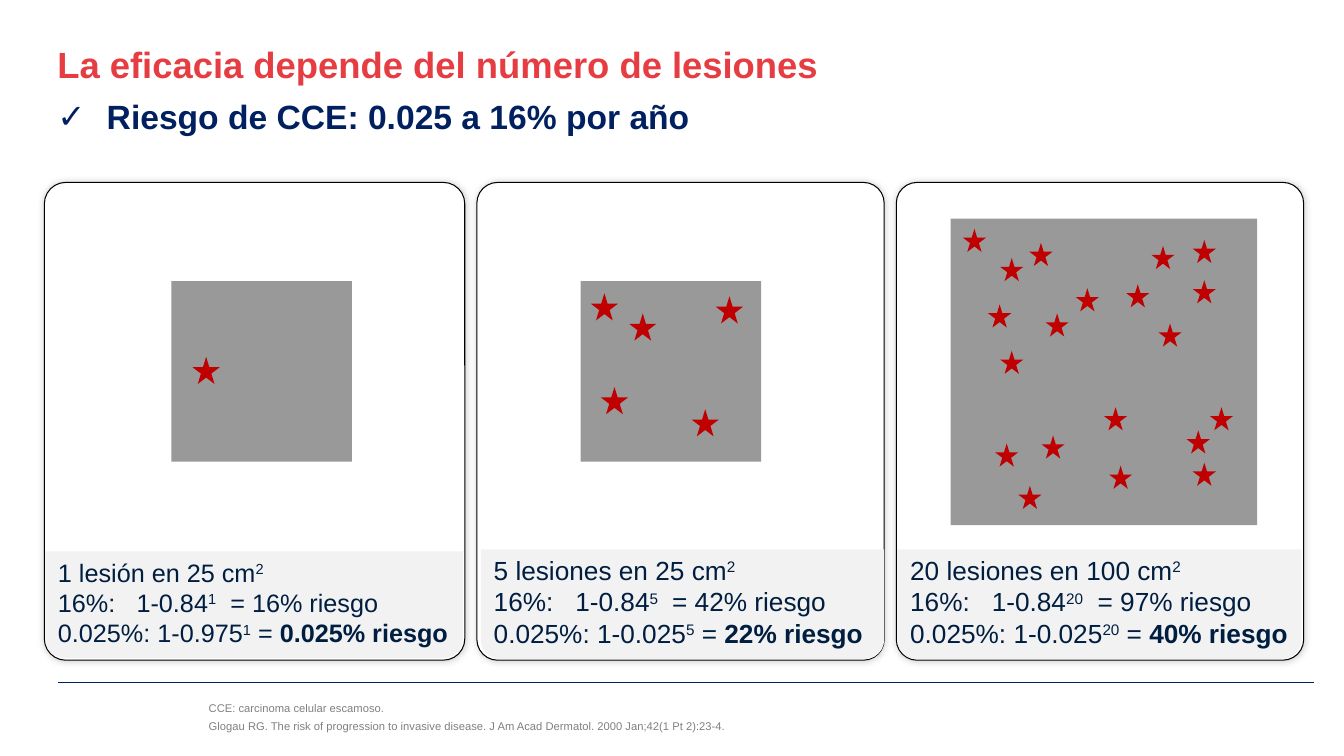
from lxml import etree
from pptx import Presentation
from pptx import util as u
from pptx.dml.color import RGBColor
from pptx.enum import shapes, text
from pptx.oxml import ns

NAVY, CAPTION_INK, RED, STAR_RED = "002060", "001E40", "E63D42", "C00000"
SKIN, CAPTION_FILL, BLACK, WHITE, NOTE_GREY = "999999", "F2F2F2", "000000", "FFFFFF", "808080"
CARD_TOP, CARD_HEIGHT = 18.1, 47.4

PANELS = [
    dict(card=(4.4, 41.7), caption=(4.5, 54.7, 41.4, 10.6), size=18, tabs=(0.78, 1.71),
         headline="1 lesión en 25 cm", power="1", base="0.975", high="16%", low="0.025%",
         field=(17, 27.9, 17.9), star=2.7, lesions=[(2.1, 7.5)]),
    dict(card=(47.3, 40.4), caption=(47.7, 54.5, 40, 10.9), size=18.7, tabs=(0.81, 1.77),
         headline="5 lesiones en 25 cm", power="5", base="0.025", high="42%", low="22%",
         field=(57.6, 27.9, 17.9), star=2.7,
         lesions=[(1, 1.2), (4.8, 3.2), (2, 10.5), (13.4, 1.5), (11, 12.7)]),
    dict(card=(88.9, 40.4), caption=(89, 54.5, 40.1, 10.9), size=18.7, tabs=(0.81, 1.86),
         headline="20 lesiones en 100 cm", power="20", base="0.025", high="97%", low="40%",
         field=(94.3, 21.7, 30.4), star=2.3,
         lesions=[(4.9, 3.9), (24, 2.1), (24, 24.2), (3.7, 8.5), (4.9, 13.1),
                  (7.8, 2.4), (17.4, 6.5), (25.7, 18.7), (1.2, 1), (12.4, 6.9),
                  (23.4, 21), (19.9, 2.7), (24, 6.1), (9.4, 9.4), (9, 21.5),
                  (15.2, 18.7), (20.6, 10.4), (15.7, 24.5), (6.7, 26.5), (4.4, 22.3)]),
]


def cells(*counts):
    """Turn counts of tenth-of-an-inch grid cells into lengths."""
    return [u.Inches(count / 10) for count in counts]


def color(hex_code):
    """Return the colour for a hex string."""
    return RGBColor.from_string(hex_code)


def add_xml(parent, tag, **attributes):
    """Append a drawing element and return it."""
    child = etree.SubElement(parent, ns.qn(tag))
    for key, value in attributes.items():
        child.set(key, value)
    return child


def add_block(slide, preset, box, fill, adjustments=()):
    """Add a flat filled preset shape without outline."""
    block = slide.shapes.add_shape(preset, *cells(*box))
    block.shadow.inherit = False
    block.fill.solid()
    block.fill.fore_color.rgb = color(fill)
    block.line.fill.background()
    for index, value in enumerate(adjustments):
        block.adjustments[index] = value
    return block


def add_card(slide, left, width):
    """Add an outlined rounded card with a soft shadow."""
    card = add_block(slide, shapes.MSO_SHAPE.ROUNDED_RECTANGLE,
                     (left, CARD_TOP, width, CARD_HEIGHT), WHITE, [0.051])
    card.line.color.rgb = color(BLACK)
    card.line.width = u.Pt(0.75)
    effects = card._element.spPr.find(ns.qn("a:effectLst"))
    shadow = add_xml(effects, "a:outerShdw", blurRad=str(u.Pt(5)), dist="0", dir="0",
                     algn="ctr", rotWithShape="0")
    add_xml(add_xml(shadow, "a:srgbClr", val=BLACK), "a:alpha", val="20000")


def add_words(paragraph, words, size, ink, bold=False, raised=False):
    """Add one formatted run to a paragraph."""
    run = paragraph.add_run()
    run.text = words
    run.font.name, run.font.size, run.font.bold = "Arial", u.Pt(size), bold
    run.font.color.rgb = color(ink)
    if raised:
        run._r.get_or_add_rPr().set("baseline", "30000")


def add_text_area(slide, box, margins):
    """Add a wrapping text box and return its frame."""
    frame = slide.shapes.add_textbox(*cells(*box)).text_frame
    frame.word_wrap = True
    set_margins(frame, *margins)
    return frame


def set_margins(frame, side, edge):
    """Set equal side margins and equal top and bottom margins."""
    frame.margin_left = frame.margin_right = u.Inches(side)
    frame.margin_top = frame.margin_bottom = u.Inches(edge)


def add_heading(slide):
    """Add the title and its check-marked subtitle."""
    frame = add_text_area(slide, (4.7, 4.2, 124.5, 9.7), (0.1, 0.05))
    title, risk = frame.paragraphs[0], frame.add_paragraph()
    properties = risk._p.get_or_add_pPr()
    properties.set("marL", str(u.Inches(0.49)))
    properties.set("indent", str(-u.Inches(0.49)))
    add_xml(properties, "a:buFont", typeface="Arial")
    add_xml(properties, "a:buChar", char="✓")
    title.line_spacing = risk.line_spacing = 0.9
    risk.space_before = u.Pt(10)
    add_words(title, "La eficacia depende del número de lesiones", 26, RED, bold=True)
    add_words(risk, "Riesgo de CCE: 0.025 a 16% por año", 24, NAVY, bold=True)


def add_caption(slide, panel):
    """Add the risk calculation at the foot of a card."""
    caption = add_block(slide, shapes.MSO_SHAPE.ROUND_2_SAME_RECTANGLE,
                        panel["caption"], CAPTION_FILL, [0, 0.178])
    frame = caption.text_frame
    frame.word_wrap = True
    frame.auto_size = text.MSO_AUTO_SIZE.SHAPE_TO_FIT_TEXT
    frame.vertical_anchor = text.MSO_ANCHOR.BOTTOM
    set_margins(frame, 0.07, 0.05)
    lines = [
        (panel["headline"], "2", "", ""),
        ("16%:\t1-0.84", panel["power"], f"\t= {panel['high']} riesgo", ""),
        (f"0.025%: 1-{panel['base']}", panel["power"], " = ", f"{panel['low']} riesgo"),
    ]
    for index, (lead, power, result, risk) in enumerate(lines):
        line = frame.add_paragraph() if index else frame.paragraphs[0]
        line.alignment = text.PP_ALIGN.LEFT
        if "\t" in lead:
            stops = add_xml(line._p.get_or_add_pPr(), "a:tabLst")
            for stop in panel["tabs"]:
                add_xml(stops, "a:tab", pos=str(u.Inches(stop)), algn="l")
        add_words(line, lead, panel["size"], CAPTION_INK)
        add_words(line, power, panel["size"], CAPTION_INK, raised=True)
        if result:
            add_words(line, result, panel["size"], CAPTION_INK)
        if risk:
            add_words(line, risk, panel["size"], CAPTION_INK, bold=True)


def add_lesions(slide, field, star, lesions):
    """Add a skin field with its lesions placed from the field's corner."""
    left, top, side = field
    add_block(slide, shapes.MSO_SHAPE.RECTANGLE, (left, top, side, side), SKIN)
    for across, down in lesions:
        add_block(slide, shapes.MSO_SHAPE.STAR_5_POINT,
                  (left + across, top + down, star, star), STAR_RED)


def add_footer(slide):
    """Add the abbreviation and the reference."""
    frame = add_text_area(slide, (20.7, 69, 56.7, 3.9), (0, 0))
    notes = ["CCE: carcinoma celular escamoso.",
             "Glogau RG. The risk of progression to invasive disease. "
             "J Am Acad Dermatol. 2000 Jan;42(1 Pt 2):23-4."]
    for index, note in enumerate(notes):
        line = frame.add_paragraph() if index else frame.paragraphs[0]
        line.line_spacing = 1.4
        add_words(line, note, 8, NOTE_GREY)


def add_rule(slide):
    """Add the thin line above the footer."""
    rule = slide.shapes.add_connector(shapes.MSO_CONNECTOR.STRAIGHT,
                                      *cells(5.8, 67.7, 130.3, 67.7))
    rule.line.color.rgb = color(NAVY)
    rule.line.width = u.Pt(1)
    add_xml(rule._element.spPr, "a:effectLst")


def main():
    """Build and save the slide."""
    deck = Presentation()
    deck.slide_width, deck.slide_height = cells(133.3, 75)
    slide = deck.slides.add_slide(deck.slide_layouts[6])
    add_rule(slide)
    add_heading(slide)
    for panel in PANELS:
        add_card(slide, *panel["card"])
        add_caption(slide, panel)
        add_lesions(slide, panel["field"], panel["star"], panel["lesions"])
    add_footer(slide)
    deck.save("out.pptx")


if __name__ == "__main__":
    main()
